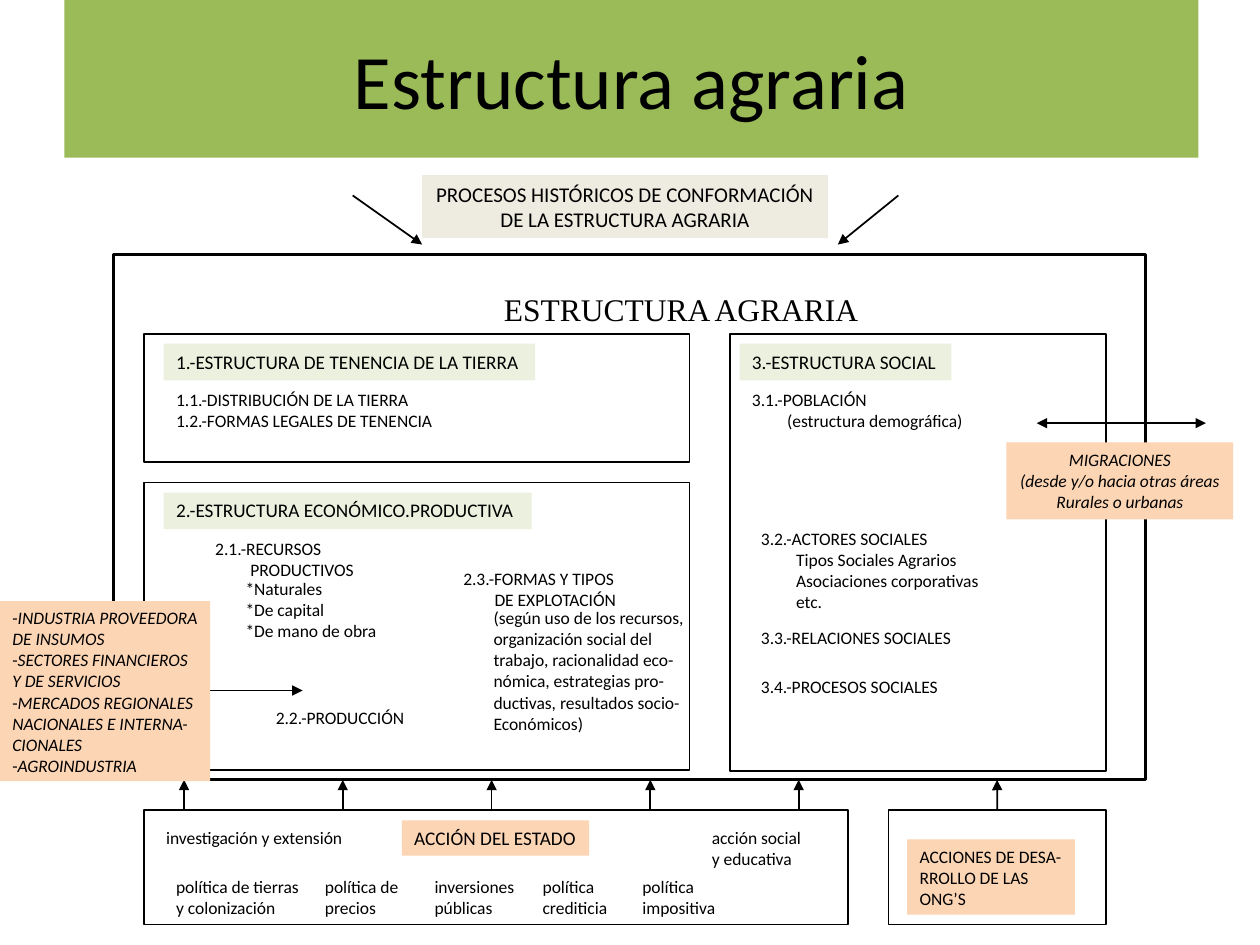
from lxml import etree
from pptx import Presentation
from pptx.dml.color import RGBColor
from pptx.enum.shapes import MSO_CONNECTOR, MSO_SHAPE
from pptx.enum.text import MSO_ANCHOR, MSO_AUTO_SIZE, PP_ALIGN
from pptx.oxml.ns import qn
from pptx.util import Cm, Pt

RECTANGLE = MSO_SHAPE.RECTANGLE
STRAIGHT = MSO_CONNECTOR.STRAIGHT
LEFT, CENTER = PP_ALIGN.LEFT, PP_ALIGN.CENTER
TOP, MIDDLE = MSO_ANCHOR.TOP, MSO_ANCHOR.MIDDLE
GROW = MSO_AUTO_SIZE.SHAPE_TO_FIT_TEXT
TOP_SIDE = 0

COLORS = {
    "ink": "000000",
    "title": "9BBB59",
    "history": "EEECE1",
    "heading": "EBF1DE",
    "external": "FCD5B5",
}

FRAME_BOTTOM = 15.72
ACTIONS_TOP = 16.33

HEADINGS = [
    ("1.-ESTRUCTURA DE TENENCIA DE LA TIERRA", (3.3, 6.93, 7.49, 0.74)),
    ("2.-ESTRUCTURA ECONÓMICO.PRODUCTIVA", (3.3, 9.93, 7.42, 0.74)),
    ("3.-ESTRUCTURA SOCIAL", (14.91, 6.93, 4.27, 0.74)),
]

TOPICS = [
    ("1.1.-DISTRIBUCIÓN DE LA TIERRA\n1.2.-FORMAS LEGALES DE TENENCIA", (3.3, 7.72, 5.77, 1.12), 0),
    ("2.1.-RECURSOS\nPRODUCTIVOS", (4.09, 10.72, 3.35, 1.12), 0.71),
    ("*Naturales\n*De capital\n*De mano de obra", (4.7, 11.53, 3.2, 1.55), 0),
    ("2.2.-PRODUCCIÓN", (5.31, 14.12, 3.15, 0.69), 0),
    ("2.3.-FORMAS Y TIPOS\nDE EXPLOTACIÓN", (9.09, 11.33, 3.68, 1.12), 0.63),
    ("(según uso de los recursos,\norganización social del\ntrabajo, racionalidad eco-\n"
     "nómica, estrategias pro-\nductivas, resultados socio-\nEconómicos)", (9.7, 12.12, 4.39, 2.82), 0),
    ("3.1.-POBLACIÓN\n(estructura demográfica)", (14.91, 7.72, 4.83, 1.12), 0.71),
    ("3.2.-ACTORES SOCIALES\nTipos Sociales Agrarios\nAsociaciones corporativas\netc.",
     (15.09, 10.52, 4.95, 1.96), 0.71),
    ("3.3.-RELACIONES SOCIALES", (15.09, 12.52, 4.42, 0.69), 0),
    ("3.4.-PROCESOS SOCIALES", (15.09, 13.51, 4.17, 0.69), 0),
    ("investigación y extensión", (3.1, 16.54, 4.09, 0.69), 0),
    ("acción social\ny educativa", (14.1, 16.54, 2.31, 1.09), 0),
]

POLICIES = [
    ("política de tierras\ny colonización", 3.3, 3),
    ("política de\nprecios", 6.3, 2.01),
    ("inversiones\npúblicas", 8.51, 2.13),
    ("política\ncrediticia", 10.69, 1.83),
    ("política\nimpositiva", 12.7, 1.98),
]

STATE_ARROWS = [(3.71, 1), (6.91, 1), (9.91, 0.75), (13.11, 1), (16.1, 1)]

MARKETS = """-INDUSTRIA PROVEEDORA
DE INSUMOS
-SECTORES FINANCIEROS
Y DE SERVICIOS
-MERCADOS REGIONALES
NACIONALES E INTERNA-
CIONALES
-AGROINDUSTRIA"""


def color(name):
    """Return the named colour."""
    return RGBColor.from_string(COLORS[name])


def format_run(run, size, font="Calibri", italic=False):
    """Give a run its font, size and ink."""
    run.font.name = font
    run.font.size = Pt(size)
    run.font.italic = italic
    run.font.color.rgb = color("ink")


def write(frame, text, size, font="Calibri", align=LEFT, italic=False, indent=0):
    """Fill an unwrapped text frame, indenting every line after the first."""
    frame.text = text
    frame.word_wrap = False
    frame.auto_size = GROW
    frame.vertical_anchor = TOP
    for number, paragraph in enumerate(frame.paragraphs):
        paragraph.alignment = align
        if number and indent:
            paragraph._p.get_or_add_pPr().set("marL", str(Cm(indent)))
        for run in paragraph.runs:
            format_run(run, size, font, italic)


def add_frame(slide, place, weight=1):
    """Add an unfilled rectangle with a black outline."""
    frame = slide.shapes.add_shape(RECTANGLE, *map(Cm, place))
    frame.shadow.inherit = False
    frame.fill.background()
    frame.line.color.rgb = color("ink")
    frame.line.width = Pt(weight)
    return frame


def add_label(slide, text, place, fill, size, align=LEFT, italic=False):
    """Add a filled rectangle holding text."""
    label = slide.shapes.add_shape(RECTANGLE, *map(Cm, place))
    label.shadow.inherit = False
    label.fill.solid()
    label.fill.fore_color.rgb = color(fill)
    label.line.fill.background()
    write(label.text_frame, text, size, align=align, italic=italic)
    return label


def add_note(slide, text, place, size=10, font="Calibri", indent=0):
    """Add a plain text box."""
    note = slide.shapes.add_textbox(*map(Cm, place))
    write(note.text_frame, text, size, font, indent=indent)


def add_arrow(slide, start, end, weight=1, double=False):
    """Add a straight black arrow, with a head at both ends if double."""
    arrow = slide.shapes.add_connector(STRAIGHT, *map(Cm, start + end))
    arrow.line.color.rgb = color("ink")
    arrow.line.width = Pt(weight)
    outline = arrow.line._get_or_add_ln()
    for tag in ("a:headEnd", "a:tailEnd") if double else ("a:tailEnd",):
        etree.SubElement(outline, qn(tag)).set("type", "triangle")
    etree.SubElement(arrow._element.spPr, qn("a:effectLst"))
    return arrow


def add_title(slide):
    """Add the title band."""
    band = add_label(slide, "Estructura agraria", (1.3, 0, 22.86, 3.18), "title", 44, CENTER)
    band.text_frame.auto_size = MSO_AUTO_SIZE.NONE
    band.text_frame.word_wrap = True
    band.text_frame.vertical_anchor = MIDDLE


def add_structure(slide):
    """Add the agrarian structure frame and its three parts."""
    add_label(slide, "PROCESOS HISTÓRICOS DE CONFORMACIÓN\nDE LA ESTRUCTURA AGRARIA",
              (8.51, 3.53, 8.18, 1.27), "history", 12, CENTER)
    add_frame(slide, (2.29, 5.13, 20.8, 10.59), 2)
    add_note(slide, "ESTRUCTURA AGRARIA", (9.91, 5.72, 7.72, 1.02), 18, "Times New Roman")
    for place in ((2.9, 6.73, 11, 2.59), (2.9, 9.73, 11, 5.79), (14.71, 6.73, 7.59, 8.81)):
        add_frame(slide, place)
    for text, place in HEADINGS:
        add_label(slide, text, place, "heading", 11)
    add_arrow(slide, (7.11, 3.94), (8.51, 4.93))
    add_arrow(slide, (18.11, 3.94), (16.89, 4.93))


def add_actions(slide):
    """Add the state and NGO boxes with their arrows to the structure."""
    add_frame(slide, (2.9, ACTIONS_TOP, 14.2, 2.31))
    add_label(slide, "ACCIÓN DEL ESTADO", (8.1, 16.54, 3.78, 0.71), "external", 11)
    for text, left, width in POLICIES:
        add_note(slide, text, (left, 17.53, width, 1.09))
    for x, weight in STATE_ARROWS:
        add_arrow(slide, (x, ACTIONS_TOP), (x, FRAME_BOTTOM), weight)
    ngo = add_frame(slide, (17.91, ACTIONS_TOP, 4.39, 2.31))
    ngo_arrow = add_arrow(slide, (20.1, ACTIONS_TOP), (20.1, FRAME_BOTTOM))
    ngo_arrow.begin_connect(ngo, TOP_SIDE)
    add_label(slide, "ACCIONES DE DESA-\nRROLLO DE LAS\nONG’S", (18.29, 16.92, 3.38, 1.52), "external", 10)


def add_surroundings(slide):
    """Add migrations and markets with their two-way arrows."""
    add_arrow(slide, (20.9, 8.53), (24.31, 8.53), double=True)
    add_label(slide, "MIGRACIONES\n(desde y/o hacia otras áreas\nRurales o urbanas",
              (20.29, 8.92, 4.57, 1.55), "external", 10, CENTER, True)
    add_arrow(slide, (3.71, 13.92), (6.1, 13.92), double=True)
    markets = add_label(slide, MARKETS, (0, 12.12, 4.24, 3.63), "external", 10, italic=True)
    for paragraph in markets.text_frame.paragraphs:
        if paragraph.text.startswith("-"):
            dash, name = paragraph.runs[0], paragraph.add_run()
            name.text = dash.text[1:]
            dash.text = "-"
            format_run(dash, 10)
            format_run(name, 10, italic=True)


def main():
    """Build the slide and save it."""
    deck = Presentation()
    deck.slide_width, deck.slide_height = Cm(25.4), Cm(19.05)
    slide = deck.slides.add_slide(deck.slide_layouts[6])
    add_title(slide)
    add_structure(slide)
    add_actions(slide)
    for text, place, indent in TOPICS:
        add_note(slide, text, place, indent=indent)
    add_surroundings(slide)
    deck.save("out.pptx")


if __name__ == "__main__":
    main()
